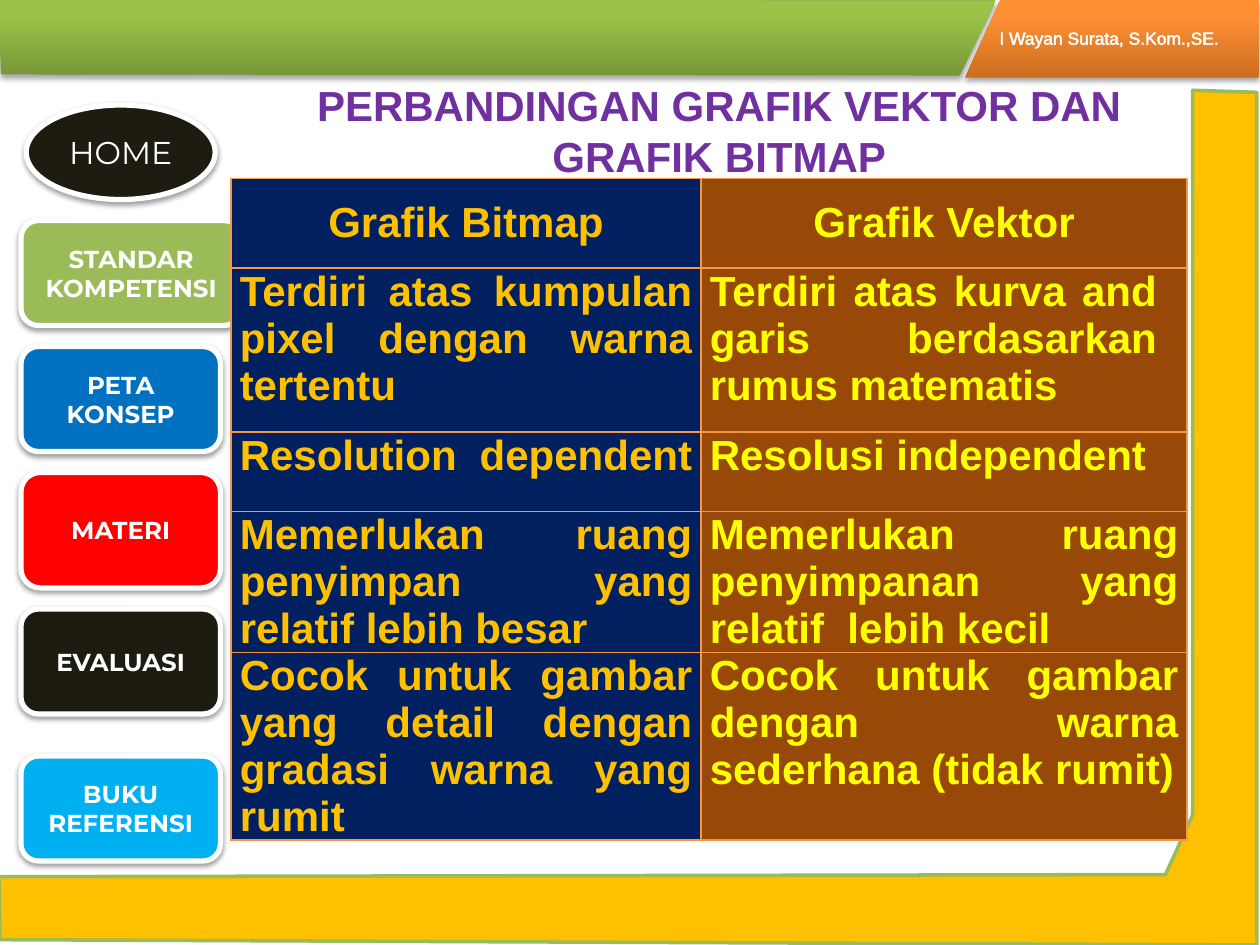
import lxml.etree
import pptx
import pptx.dml.color
import pptx.enum.shapes
import pptx.enum.text
import pptx.oxml
import pptx.oxml.ns
import pptx.util

UNIT = pptx.util.Inches(10) // 120
COLORS = {
    "white": "FFFFFF", "black": "1E1C11", "green": "9BBB59", "blue": "0070C0",
    "red": "FF0000", "sky": "00B0F0", "gold": "FFC000", "purple": "7030A0",
    "navy": "002060", "brown": "984807", "yellow": "FFFF00", "orange": "F79646",
    "leaf_dark": "779737", "leaf_light": "9BC348",
    "amber_dark": "CC6E20", "amber_light": "FF9034",
}
SHAPES = pptx.enum.shapes.MSO_SHAPE
ALIGN = pptx.enum.text.PP_ALIGN
ANCHOR = pptx.enum.text.MSO_ANCHOR
BUTTONS = [
    ("STANDAR KOMPETENSI", "green", 21, 21, 10),
    ("PETA KONSEP", "blue", 33, 19, 10),
    ("MATERI", "red", 45, 19, 11),
    ("EVALUASI", "black", 58, 19, 10),
    ("BUKU REFERENSI", "sky", 72, 19, 10),
]
FRAME = [(-0.1, 83.5), (111, 83.3), (113.6, 77.6), (113.6, 8.6),
         (119.7, 8.8), (119.7, 90), (0, 89.5)]
GREEN_BANNER = [(0, 0), (94.8, 0.1), (91.4, 7.2), (0.1, 7.1)]
ORANGE_BANNER = [(95.3, 0), (119.9, 0), (119.9, 7.4), (91.9, 7.4)]
TABLE_COLUMNS = [44.76, 46.3]
TABLE_ROWS = [8.55, 15.6, 7.56, 13.44, 17.88]
COMPARISON = [
    ("Grafik Bitmap", "Grafik Vektor"),
    ("Terdiri atas kumpulan pixel dengan warna tertentu",
     "Terdiri atas kurva and garis berdasarkan rumus matematis"),
    ("Resolution dependent ", "Resolusi independent"),
    ("Memerlukan ruang penyimpan yang relatif lebih besar ",
     "Memerlukan ruang penyimpanan yang relatif  lebih kecil"),
    ("Cocok untuk gambar yang detail dengan gradasi warna yang rumit",
     "Cocok untuk gambar dengan warna sederhana (tidak rumit)"),
]


def grid(*values):
    """Turn grid units into whole EMU lengths."""
    return [pptx.util.Emu(round(value * UNIT)) for value in values]


def color(name):
    """Look up a named colour."""
    return pptx.dml.color.RGBColor.from_string(COLORS[name])


def line_xml(tag, name, points):
    """Build a solid line element for a cell border or text outline."""
    return pptx.oxml.parse_xml(
        f'<a:{tag} {pptx.oxml.ns.nsdecls("a")} w="{round(points * 12700)}"><a:solidFill>'
        f'<a:srgbClr val="{COLORS[name]}"/></a:solidFill></a:{tag}>')


def add_shadow(shape, opacity, distance):
    """Give a shape a soft shadow that falls downwards."""
    shape.shadow.inherit = False
    effects = shape._element.spPr.find(pptx.oxml.ns.qn("a:effectLst"))
    effects.append(pptx.oxml.parse_xml(
        f'<a:outerShdw {pptx.oxml.ns.nsdecls("a")} blurRad="39370" '
        f'dist="{round(distance * 12700)}" dir="5400000" rotWithShape="0">'
        f'<a:srgbClr val="000000"><a:alpha val="{opacity * 1000}"/></a:srgbClr></a:outerShdw>'))


def write(frame, text, size, font, name, align, bold=False, outline=None):
    """Write one formatted run in the first paragraph of a text frame."""
    frame.word_wrap = True
    para = frame.paragraphs[0]
    para.alignment = align
    span = para.add_run()
    span.text = text
    span.font.size = pptx.util.Pt(size)
    span.font.name = font
    span.font.bold = bold
    span.font.color.rgb = color(name)
    if outline:
        span.font._element.insert(0, line_xml("ln", *outline))
    return para


def add_button(page, kind, place, text, fill, size, bold):
    """Add a menu button with a white rim."""
    box = page.shapes.add_shape(kind, *grid(*place))
    box.fill.solid()
    box.fill.fore_color.rgb = color(fill)
    box.line.color.rgb = color("white")
    box.line.width = pptx.util.Pt(3)
    add_shadow(box, 38, 1.6)
    box.text_frame.vertical_anchor = ANCHOR.MIDDLE
    write(box.text_frame, text, size, "Montserrat", "white", ALIGN.CENTER, bold)


def add_outline(page, points):
    """Add a closed polygon through grid points."""
    corners = [grid(*point) for point in points]
    builder = page.shapes.build_freeform(*corners[0])
    builder.add_line_segments(corners[1:], close=True)
    shape = builder.convert_to_shape()
    shape.shadow.inherit = False
    return shape


def add_frame(page):
    """Add the gold frame along the right and bottom edges."""
    frame = add_outline(page, FRAME)
    frame.fill.solid()
    frame.fill.fore_color.rgb = color("gold")
    frame.line.color.rgb = color("green")
    frame.line.width = pptx.util.Pt(2)


def add_banner(page, points, dark, light):
    """Add a header banner that darkens towards its foot."""
    banner = add_outline(page, points)
    banner.line.fill.background()
    banner.fill.gradient()
    banner.fill.gradient_angle = 90
    for stop, name, position in zip(banner.fill.gradient_stops, (dark, light), (0, 0.8)):
        stop.color.rgb = color(name)
        stop.position = position
    add_shadow(banner, 35, 1.8)


def add_text(page, place, text, size, name, align, bold, outline):
    """Add a wrapped text box."""
    box = page.shapes.add_textbox(*grid(*place))
    write(box.text_frame, text, size, "Arial", name, align, bold, outline)


def fill_cell(cell, text, fill, name, heading):
    """Write and colour one table cell."""
    cell.fill.solid()
    cell.fill.fore_color.rgb = color(fill)
    cell.margin_left = cell.margin_right = pptx.util.Inches(0.07)
    cell.margin_top = cell.margin_bottom = 0
    cell.vertical_anchor = ANCHOR.MIDDLE if heading else ANCHOR.TOP
    align = ALIGN.CENTER if heading else ALIGN.JUSTIFY
    para = write(cell.text_frame, text, 24, "Arial", name, align, True)
    para.line_spacing = pptx.util.Pt(26.8)
    properties = cell._tc.get_or_add_tcPr()
    for index, tag in enumerate(("lnL", "lnR", "lnT", "lnB")):
        properties.insert(index, line_xml(tag, "orange", 1))


def add_comparison(page):
    """Add the table that compares bitmap and vector graphics."""
    place = grid(22, 17, sum(TABLE_COLUMNS), sum(TABLE_ROWS))
    table = page.shapes.add_table(len(TABLE_ROWS), len(TABLE_COLUMNS), *place).table
    for column, width in zip(table.columns, grid(*TABLE_COLUMNS)):
        column.width = width
    for row, height in zip(table.rows, grid(*TABLE_ROWS)):
        row.height = height
    styles = (("navy", "gold"), ("brown", "yellow"))
    for row, texts in enumerate(COMPARISON):
        for column, (text, style) in enumerate(zip(texts, styles)):
            fill_cell(table.cell(row, column), text, *style, row == 0)
    table.cell(1, 1).margin_right = pptx.util.Inches(0.24)


def main():
    """Build the slide and save it."""
    deck = pptx.Presentation()
    deck.slide_width, deck.slide_height = grid(120, 90)
    page = deck.slides.add_slide(deck.slide_layouts[6])
    add_button(page, SHAPES.OVAL, (2.5, 10, 18, 9), "HOME", "black", 18, False)
    for text, fill, top, width, height in BUTTONS:
        add_button(page, SHAPES.ROUNDED_RECTANGLE, (2, top, width, height), text, fill, 14, True)
    add_frame(page)
    add_banner(page, GREEN_BANNER, "leaf_dark", "leaf_light")
    add_banner(page, ORANGE_BANNER, "amber_dark", "amber_light")
    add_text(page, (94, 2, 26, 3.2), "I Wayan Surata, S.Kom.,SE.", 10, "white",
             ALIGN.LEFT, False, ("white", 1.45))
    add_text(page, (23, 7, 91, 10.8), "PERBANDINGAN GRAFIK VEKTOR DAN GRAFIK BITMAP",
             24, "purple", ALIGN.CENTER, True, ("blue", 0.75))
    add_comparison(page)
    deck.save("out.pptx")


if __name__ == "__main__":
    main()
